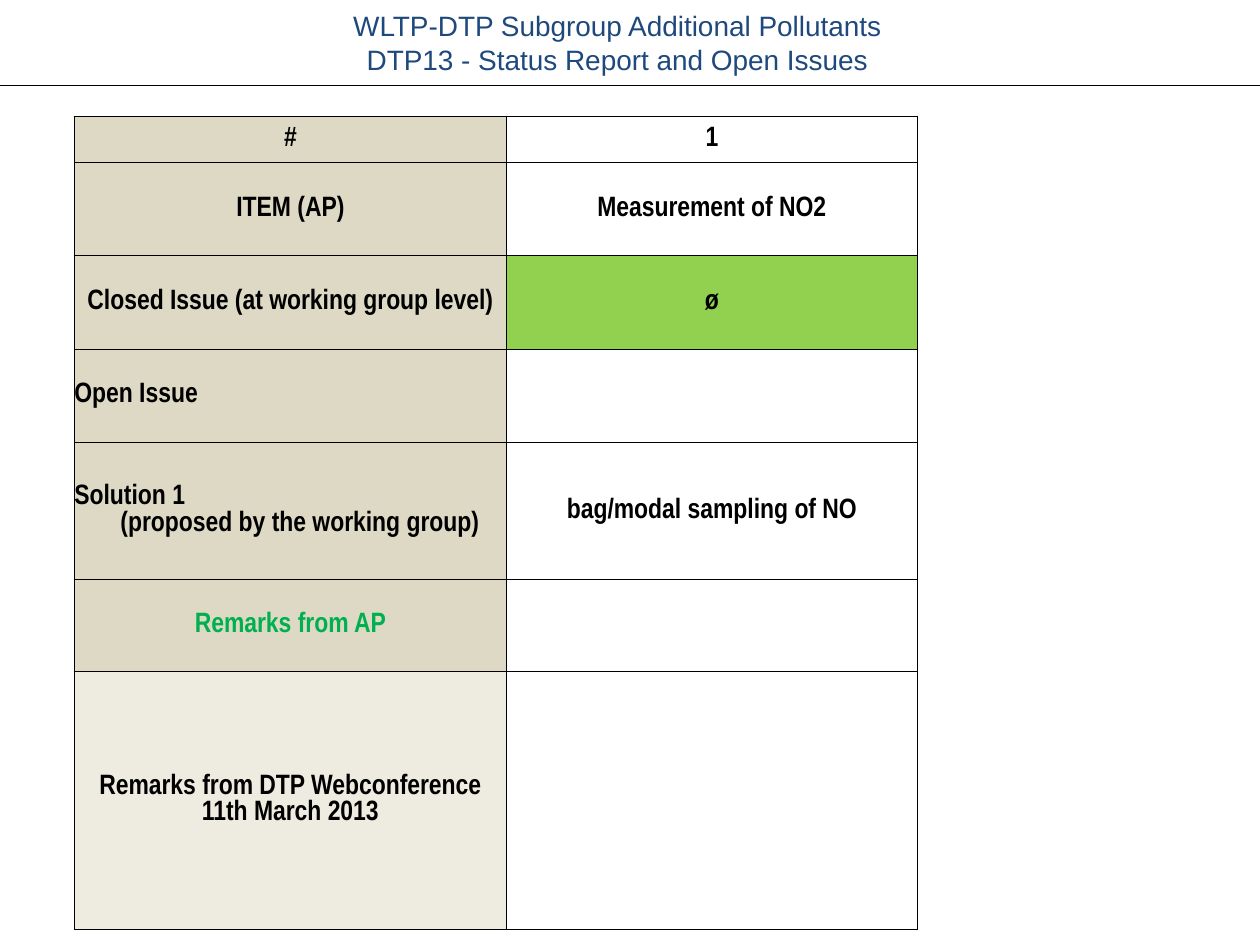
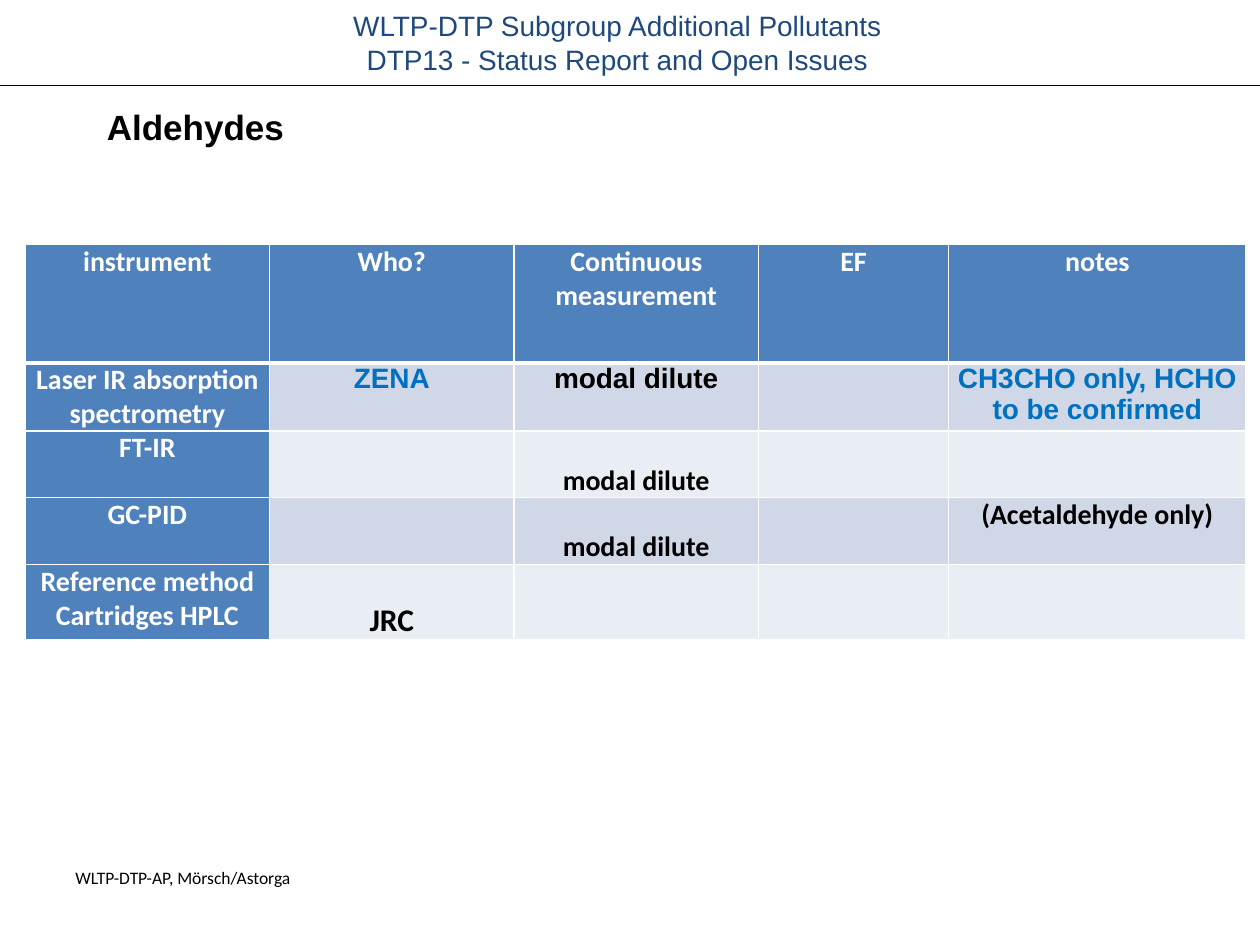
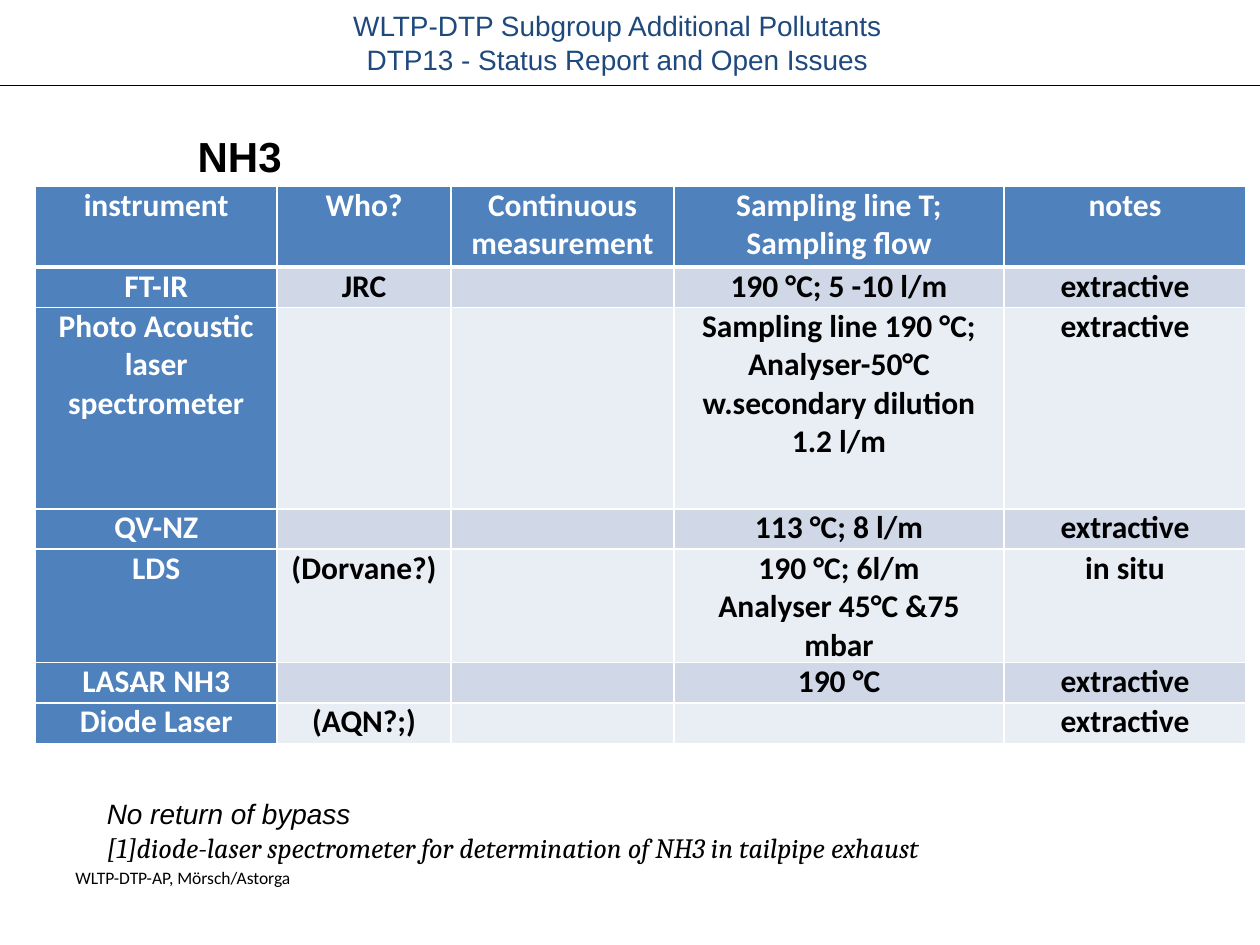
from lxml.etree import SubElement
from pptx import Presentation
from pptx.dml.color import RGBColor
from pptx.enum.shapes import MSO_CONNECTOR
from pptx.enum.text import MSO_ANCHOR, PP_ALIGN
from pptx.oxml.ns import qn
from pptx.util import Inches, Pt

COLORS = {
    "black": "000000", "white": "FFFFFF", "title": "1F497D",
    "sand": "DDD9C4", "light_sand": "EEECE1", "closed": "92D050",
    "green": "00B050", "blue": "0070C0", "header": "4F81BD",
    "band_dark": "D0D8E8", "band_light": "E9EDF4",
}

DECK_TITLE = "WLTP-DTP Subgroup Additional Pollutants\nDTP13 - Status Report and Open Issues"
FOOTER = "WLTP-DTP-AP, Mörsch/Astorga"

ISSUE_COLUMNS = [3.43, 3.26]
ISSUE_ROWS = [
    (0.37, "#", "1"),
    (0.74, "ITEM (AP)", "Measurement of NO2"),
    (0.74, "Closed Issue (at working group level)", "ø"),
    (0.74, "Open Issue", ""),
    (1.09, "Solution 1\n(proposed by the working group)", "bag/modal sampling of NO"),
    (0.73, "Remarks from AP", ""),
    (2.05, "Remarks from DTP Webconference 11th March 2013", ""),
]

ARIAL = {"font": "Arial"}
ARIAL_BLUE = {"font": "Arial", "color": "blue"}
LOW = {"anchor": MSO_ANCHOR.BOTTOM}
LOW_LARGE = {"anchor": MSO_ANCHOR.BOTTOM, "size": 18}

ALDEHYDE_COLUMNS = [1.94, 1.94, 1.94, 1.51, 2.36]
ALDEHYDE_ROWS = [
    (0.94, "instrument", "Who?", "Continuous measurement", "EF", "notes"),
    (0.54, "Laser IR absorption spectrometry", ("ZENA", ARIAL_BLUE), ("modal dilute", ARIAL),
     "", ("CH3CHO only, HCHO to be confirmed", ARIAL_BLUE)),
    (0.53, "FT-IR", "", ("modal dilute", LOW), "", ""),
    (0.53, "GC-PID", "", ("modal dilute", LOW), "", "(Acetaldehyde only)"),
    (0.6, "Reference method\nCartridges HPLC", ("JRC", LOW_LARGE), "", "", ""),
]

AMMONIA_COLUMNS = [1.92, 1.38, 1.77, 2.62, 1.92]
AMMONIA_ROWS = [
    (0.64, "instrument", "Who?", "Continuous measurement",
     "Sampling line T;\nSampling flow", "notes"),
    (0.32, "FT-IR", "JRC", "", "190 °C; 5 -10 l/m", "extractive"),
    (1.6, "Photo Acoustic laser spectrometer", "", "",
     "Sampling line 190 °C;\nAnalyser-50°C w.secondary dilution\n1.2 l/m", "extractive"),
    (0.32, "QV-NZ", "", "", "113 °C; 8 l/m", "extractive"),
    (0.9, "LDS", "(Dorvane?)", "", "190 °C; 6l/m\nAnalyser 45°C &75 mbar", "in situ"),
    (0.32, "LASAR NH3", "", "", "190 °C", "extractive"),
    (0.32, "Diode Laser", "(AQN?;)", "", "", "extractive"),
]
STRUCK_NAME = ("LAS", "A", "R NH3")


def rgb(name):
    return RGBColor.from_string(COLORS[name])


def style_font(font, name, size, color="black", bold=False, italic=False):
    font.name, font.size = name, Pt(size)
    font.bold, font.italic = bold, italic
    font.color.rgb = rgb(color)


def style_text(text_frame, *style, align=PP_ALIGN.LEFT, **options):
    for paragraph in text_frame.paragraphs:
        paragraph.alignment = align
        for run in paragraph.runs:
            style_font(run.font, *style, **options)


def add_text(slide, text, box, *style, anchor=MSO_ANCHOR.TOP, wrap=True, **options):
    text_frame = slide.shapes.add_textbox(*map(Inches, box)).text_frame
    text_frame.word_wrap = wrap
    text_frame.vertical_anchor = anchor
    text_frame.text = text
    style_text(text_frame, *style, **options)
    return text_frame


def add_slide(presentation, footer=True):
    slide = presentation.slides.add_slide(presentation.slide_layouts[6])
    if footer:
        add_text(slide, FOOTER, (0.5, 6.83, 2.33, 0.52), "Calibri", 10)
    add_text(slide, DECK_TITLE, (1.48, 0.02, 6.84, 0.64), "Arial", 16, "title",
             align=PP_ALIGN.CENTER)
    rule = slide.shapes.add_connector(MSO_CONNECTOR.STRAIGHT, 0, Inches(0.68),
                                      Inches(10), Inches(0.68))
    rule.line.color.rgb = rgb("black")
    rule.line.width = Pt(0.75)
    SubElement(rule._element.spPr, qn("a:effectLst"))
    return slide


def set_borders(cell, color, **widths):
    properties = cell._tc.get_or_add_tcPr()
    for side in "LRTB":
        line = SubElement(properties, qn(f"a:ln{side}"), w=str(Pt(widths[side])))
        fill = SubElement(line, qn("a:solidFill"))
        SubElement(fill, qn("a:srgbClr"), val=COLORS[color])


def add_table(slide, left, top, columns, rows):
    heights = [row[0] for row in rows]
    table = slide.shapes.add_table(
        len(rows), len(columns), Inches(left), Inches(top),
        Inches(sum(columns)), Inches(sum(heights))).table
    for column, width in zip(table.columns, columns):
        column.width = Inches(width)
    for row, height in zip(table.rows, heights):
        row.height = Inches(height)
    return table


def fill_cell(cell, text, fill, side_margin, anchor):
    cell.margin_left = cell.margin_right = Inches(side_margin)
    cell.margin_top = cell.margin_bottom = 0
    cell.vertical_anchor = anchor
    cell.fill.solid()
    cell.fill.fore_color.rgb = rgb(fill)
    cell.text_frame.text = text


def add_issue_table(slide):
    table = add_table(slide, 0.59, 0.92, ISSUE_COLUMNS, ISSUE_ROWS)
    for row_index, (_, *texts) in enumerate(ISSUE_ROWS):
        for column_index, text in enumerate(texts):
            cell = table.cell(row_index, column_index)
            fill = "white" if column_index else "sand"
            if text == "ø":
                fill = "closed"
            elif text.startswith("Remarks from DTP"):
                fill = "light_sand"
            color = "green" if text == "Remarks from AP" else "black"
            set_borders(cell, "black", L=0.5, R=0.5, T=0.5, B=0.5)
            fill_cell(cell, text, fill, 0, MSO_ANCHOR.MIDDLE)
            style_text(cell.text_frame, "Arial Narrow", 16, color, bold=True,
                       align=PP_ALIGN.CENTER)
            if text.startswith(("Open Issue", "Solution")):
                cell.text_frame.paragraphs[0].alignment = PP_ALIGN.LEFT
            if text.startswith("Solution"):
                indented = cell.text_frame.paragraphs[1]
                indented._p.get_or_add_pPr().set("marL", str(Inches(0.15)))


def add_instrument_table(slide, left, top, columns, rows, size):
    table = add_table(slide, left, top, columns, rows)
    for row_index, (_, *contents) in enumerate(rows):
        for column_index, content in enumerate(contents):
            text, special = content if isinstance(content, tuple) else (content, {})
            cell = table.cell(row_index, column_index)
            heading = row_index == 0 or column_index == 0
            band = "band_dark" if row_index % 2 else "band_light"
            set_borders(cell, "white", L=1, R=1, T=3 if row_index == 1 else 1,
                        B=1 if row_index else 3)
            fill_cell(cell, text, "header" if heading else band, 0.07,
                      special.get("anchor", MSO_ANCHOR.TOP))
            if text == "".join(STRUCK_NAME):
                paragraph = cell.text_frame.paragraphs[0]
                paragraph.text = ""
                for part in STRUCK_NAME:
                    run = paragraph.add_run()
                    run.text = part
                    if part == "A":
                        run._r.get_or_add_rPr().set("strike", "sngStrike")
            style_text(cell.text_frame, special.get("font", "Calibri"),
                       special.get("size", size),
                       special.get("color", "white" if heading else "black"),
                       bold=True, align=PP_ALIGN.CENTER)


def main():
    presentation = Presentation()
    presentation.slide_width, presentation.slide_height = Inches(10), Inches(7.5)

    add_issue_table(add_slide(presentation, footer=False))

    aldehydes = add_slide(presentation)
    add_instrument_table(aldehydes, 0.2, 1.94, ALDEHYDE_COLUMNS, ALDEHYDE_ROWS, 16)
    heading = add_text(aldehydes, "Aldehydes", (0.75, 0.84, 5, 0.93), "Arial", 20, bold=True)
    heading.margin_top = 0

    ammonia = add_slide(presentation)
    add_instrument_table(ammonia, 0.28, 1.48, AMMONIA_COLUMNS, AMMONIA_ROWS, 18)
    notes = add_text(
        ammonia,
        "No return of bypass\n"
        "[1]diode-laser spectrometer for determination of NH3 in tailpipe exhaust",
        (0.75, 6.27, 8.27, 0.64), "Arial", 16, italic=True, anchor=MSO_ANCHOR.MIDDLE)
    notes.paragraphs[1].runs[0].font.name = "Cambria"
    add_text(ammonia, "NH3", (1.47, 0.99, 0.88, 0.5), "Arial", 24, bold=True, wrap=False)

    presentation.save("out.pptx")


if __name__ == "__main__":
    main()
